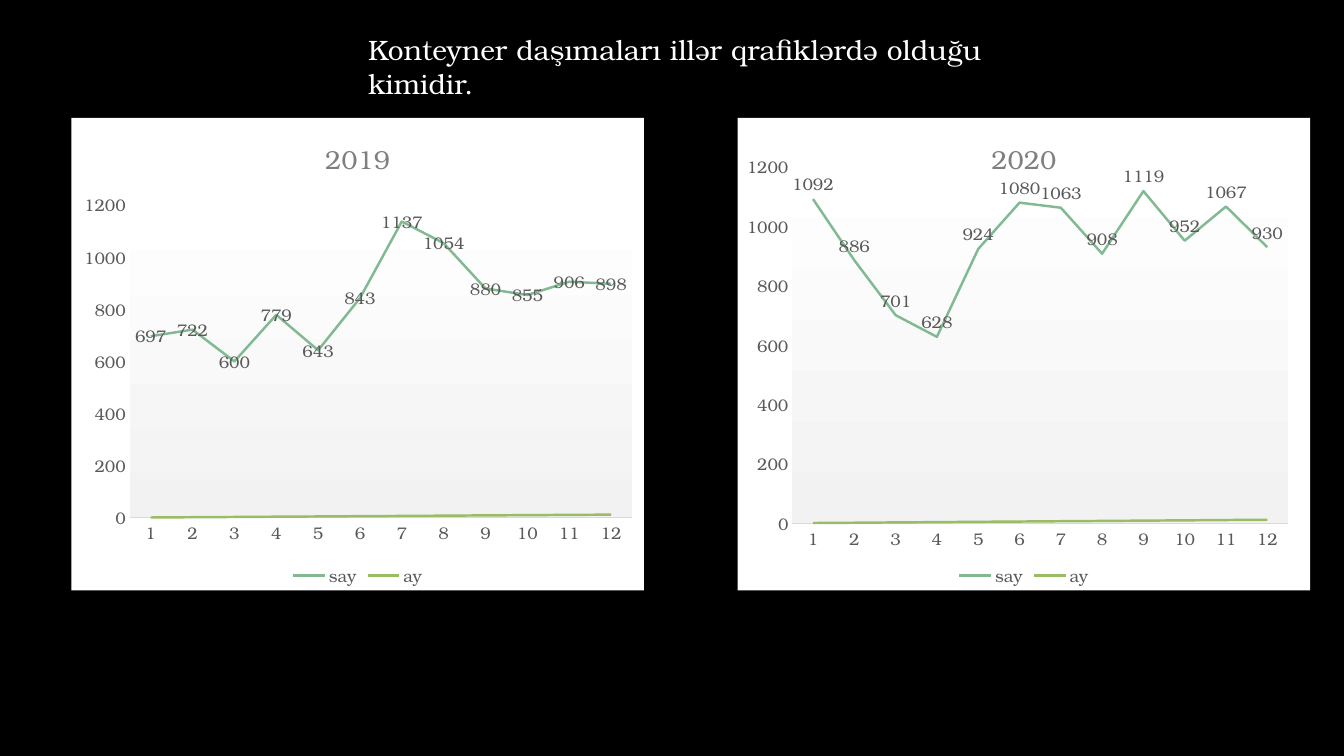
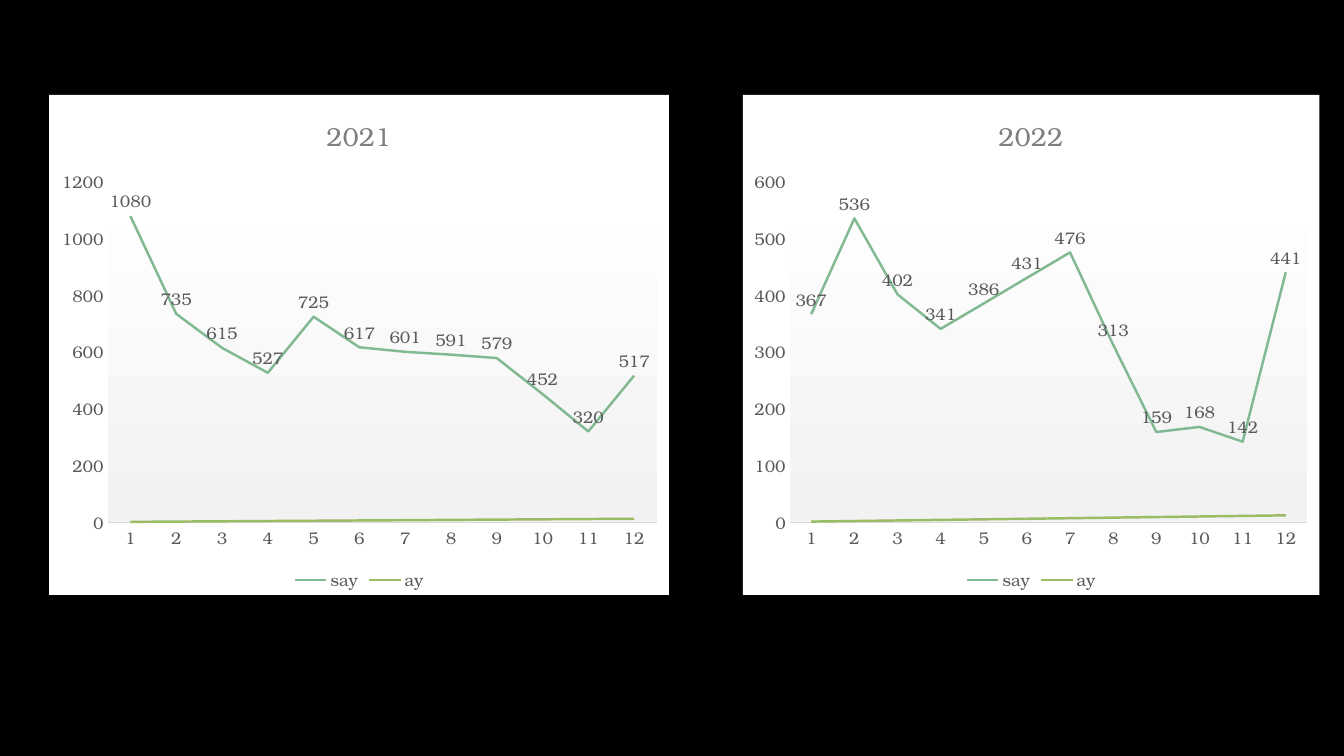
from dataclasses import dataclass

from pptx import Presentation
from pptx.chart.data import CategoryChartData
from pptx.dml.color import RGBColor
from pptx.enum.chart import XL_CHART_TYPE as ChartType
from pptx.enum.chart import XL_LABEL_POSITION as LabelPosition
from pptx.enum.chart import XL_LEGEND_POSITION as LegendPosition
from pptx.enum.chart import XL_MARKER_STYLE as MarkerStyle
from pptx.enum.chart import XL_TICK_MARK as TickMark
from pptx.enum.text import MSO_ANCHOR as Anchor
from pptx.enum.text import MSO_AUTO_SIZE as AutoSize
from pptx.enum.text import PP_ALIGN as Align
from pptx.oxml import parse_xml
from pptx.oxml.ns import nsdecls, qn
from pptx.util import Cm, Pt

TITLE_ONLY, BLANK = 5, 6
MONTHS = range(1, 13)


@dataclass(frozen=True)
class Theme:
    font: str = "TeX Gyre Bonum"
    background: RGBColor = RGBColor(0x00, 0x00, 0x00)
    title: RGBColor = RGBColor(0xFF, 0xFF, 0xFF)
    chart_title: RGBColor = RGBColor(0x7F, 0x7F, 0x7F)
    label: RGBColor = RGBColor(0x59, 0x59, 0x59)
    axis: RGBColor = RGBColor(0xD9, 0xD9, 0xD9)
    panel: RGBColor = RGBColor(0xFF, 0xFF, 0xFF)
    plot_end: RGBColor = RGBColor(0xF2, 0xF2, 0xF2)
    series: tuple = (RGBColor(0x81, 0xB9, 0x92), RGBColor(0x9A, 0xBC, 0x65))
    title_size: Pt = Pt(20)
    chart_title_size: Pt = Pt(18.6)
    label_size: Pt = Pt(12)
    line_width: Pt = Pt(1.75)
    axis_width: Pt = Pt(0.75)


class Deck:
    """Builds slides of line charts in one shared style."""

    def __init__(self, theme):
        self.theme = theme
        self.slide = None
        self.presentation = Presentation()
        self.presentation.slide_width = Cm(33.87)
        self.presentation.slide_height = Cm(19.05)
        fill = self.presentation.slide_master.background.fill
        fill.solid()
        fill.fore_color.rgb = theme.background

    def add_slide(self, layout):
        self.slide = self.presentation.slides.add_slide(self.presentation.slide_layouts[layout])

    def style_font(self, font, size, color):
        font.name, font.size, font.bold = self.theme.font, size, False
        font.color.rgb = color

    def add_title(self, text, left, top, width, height):
        shape = self.slide.shapes.title
        shape.left, shape.top, shape.width, shape.height = left, top, width, height
        frame = shape.text_frame
        frame.text = text
        frame.word_wrap = True
        frame.auto_size = AutoSize.SHAPE_TO_FIT_TEXT
        frame.vertical_anchor = Anchor.TOP
        paragraph = frame.paragraphs[0]
        paragraph.alignment = Align.LEFT
        self.style_font(paragraph.font, self.theme.title_size, self.theme.title)

    def set_layout(self, element, index, target="", **fractions):
        for layout in element.findall(qn("c:layout")):
            element.remove(layout)
        parts = [f'<c:layoutTarget val="{target}"/>'] if target else []
        parts += [f'<c:{edge}Mode val="edge"/>' for edge in "xy"]
        parts += [f'<c:{name} val="{value:.4f}"/>' for name, value in fractions.items()]
        element.insert(index, parse_xml(
            f'<c:layout {nsdecls("c")}><c:manualLayout>{"".join(parts)}'
            "</c:manualLayout></c:layout>"))

    def fill_panels(self, chart, plot_area):
        theme = self.theme
        opening = f'<c:spPr {nsdecls("c", "a")}>'
        closing = "<a:ln><a:noFill/></a:ln></c:spPr>"
        chart.element.find(qn("c:chart")).addnext(parse_xml(
            f'{opening}<a:solidFill><a:srgbClr val="{theme.panel}"/></a:solidFill>{closing}'))
        stops = "".join(
            f'<a:gs pos="{position}"><a:srgbClr val="{color}"/></a:gs>'
            for position, color in ((0, theme.panel), (100000, theme.plot_end)))
        plot_area.append(parse_xml(
            f"{opening}<a:gradFill><a:gsLst>{stops}</a:gsLst>"
            f'<a:lin ang="5400000" scaled="0"/></a:gradFill>{closing}'))

    def style_axes(self, chart, maximum):
        for axis in (chart.category_axis, chart.value_axis):
            axis.has_major_gridlines = False
            axis.major_tick_mark = axis.minor_tick_mark = TickMark.NONE
            self.style_font(axis.tick_labels.font, self.theme.label_size, self.theme.label)
        line = chart.category_axis.format.line
        line.color.rgb, line.width = self.theme.axis, self.theme.axis_width
        chart.value_axis.format.line.fill.background()
        chart.value_axis.minimum_scale = 0
        chart.value_axis.maximum_scale = maximum
        chart.value_axis.major_unit = maximum / 6

    def style_series(self, chart, label_position):
        for series, color in zip(chart.plots[0].series, self.theme.series):
            series.smooth = False
            series.marker.style = MarkerStyle.NONE
            series.format.line.color.rgb = color
            series.format.line.width = self.theme.line_width
        labels = chart.plots[0].series[0].data_labels
        labels.show_value = True
        labels.position = label_position
        self.style_font(labels.font, self.theme.label_size, self.theme.label)

    def add_line_chart(self, year, counts, box, maximum=1200, label_position=LabelPosition.ABOVE,
                       margins=(Cm(1.47), Cm(2.2), Cm(0.3), Cm(1.83))):
        data = CategoryChartData()
        data.categories = [str(month) for month in MONTHS]
        data.add_series("say", counts)
        data.add_series("ay", MONTHS)
        chart = self.slide.shapes.add_chart(ChartType.LINE, *box, data).chart
        chart.font.name = self.theme.font
        chart.plots[0].vary_by_categories = False
        self.style_axes(chart, maximum)
        self.style_series(chart, label_position)

        chart.has_legend = True
        chart.legend.position = LegendPosition.BOTTOM
        chart.legend.include_in_layout = False
        self.style_font(chart.legend.font, self.theme.label_size, self.theme.label)

        chart.has_title = True
        frame = chart.chart_title.text_frame
        frame.text = year
        self.style_font(frame.paragraphs[0].font, self.theme.chart_title_size,
                        self.theme.chart_title)

        width, height = box[2:]
        left, top, right, bottom = margins
        self.set_layout(chart.chart_title.element, 1,
                        x=0.5 - Cm(0.94) / width, y=Cm(0.38) / height)
        plot_area = chart.element.find(".//" + qn("c:plotArea"))
        self.set_layout(plot_area, 0, "inner", x=left / width, y=top / height,
                        w=(width - left - right) / width,
                        h=(height - top - bottom) / height)
        self.fill_panels(chart, plot_area)


def main():
    deck = Deck(Theme())

    deck.add_slide(TITLE_ONLY)
    deck.add_title("Konteyner daşımaları illər qrafiklərdə olduğu kimidir.",
                   Cm(9.02), Cm(0.69), Cm(17.7), Cm(1.9))
    top, width, height = Cm(2.97), Cm(14.43), Cm(11.91)
    deck.add_line_chart(
        "2019", (697, 722, 600, 779, 643, 843, 1137, 1054, 880, 855, 906, 898),
        (Cm(1.8), top, width, height), label_position=LabelPosition.CENTER)
    deck.add_line_chart(
        "2020", (1092, 886, 701, 628, 924, 1080, 1063, 908, 1119, 952, 1067, 930),
        (Cm(18.59), top, width, height),
        margins=(Cm(1.38), Cm(1.24), Cm(0.56), Cm(1.69)))

    deck.add_slide(BLANK)
    top, height = Cm(2.39), Cm(12.6)
    deck.add_line_chart(
        "2021", (1080, 735, 615, 527, 725, 617, 601, 591, 579, 452, 320, 517),
        (Cm(1.24), top, Cm(15.62), height))
    deck.add_line_chart(
        "2022", (367, 536, 402, 341, 386, 431, 476, 313, 159, 168, 142, 441),
        (Cm(18.72), top, Cm(14.53), height), maximum=600,
        margins=(Cm(1.18), Cm(2.2), Cm(0.3), Cm(1.83)))

    deck.presentation.save("out.pptx")


if __name__ == "__main__":
    main()
